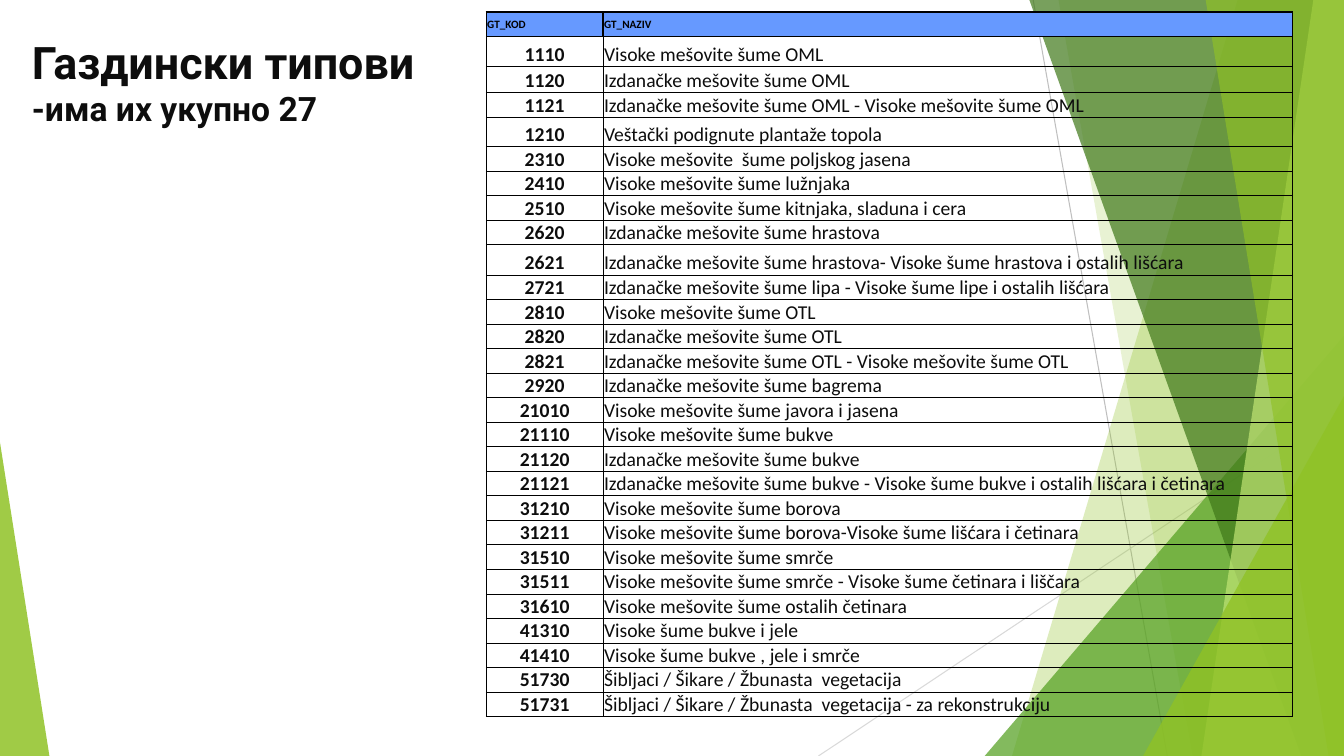
from dataclasses import dataclass
from typing import Any

from lxml import etree
from pptx import Presentation
from pptx import util as u
from pptx.dml.color import RGBColor
from pptx.enum import shapes, text
from pptx.oxml import ns

BLACK = RGBColor(0x00, 0x00, 0x00)
INK = RGBColor(0x0D, 0x0D, 0x0D)
HEADER_BLUE = RGBColor(0x66, 0x99, 0xFF)
LIME = RGBColor(0x90, 0xC2, 0x26)
PALE_LIME = RGBColor(0xC0, 0xE4, 0x74)
GREEN = RGBColor(0x54, 0xA0, 0x21)
DARK_GREEN = RGBColor(0x3F, 0x78, 0x19)
GREY = RGBColor(0xBF, 0xBF, 0xBF)
LIGHT_GREY = RGBColor(0xD9, 0xD9, 0xD9)

WIDTH, HEIGHT = 960, 540
FACET_TOP = -0.6


@dataclass(frozen=True)
class Ray:
    start: tuple[float, float]
    end: tuple[float, float]
    color: RGBColor


@dataclass(frozen=True)
class Facet:
    top_left: float
    bottom_left: float
    color: RGBColor
    opacity: int


@dataclass(frozen=True)
class Wedge:
    left: float
    top: float
    width: float
    apex: float
    color: RGBColor
    opacity: int


RAYS = [
    Ray((738, 0), (833.8, HEIGHT), GREY),
    Ray((WIDTH, 290.2), (584.6, HEIGHT), LIGHT_GREY),
]
PANES = [
    Facet(884.2, 722.9, LIME, 30),
    Facet(756, 851.8, LIME, 20),
    Wedge(703.4, 239.8, 256.6, 1, GREEN, 72),
    Facet(735.1, 929.5, DARK_GREEN, 70),
    Facet(938.2, 858.2, PALE_LIME, 70),
    Facet(861.1, 949, LIME, 65),
    Wedge(816.5, 283, 143.5, 1, LIME, 80),
    Wedge(0, 316.1, 35.3, 0, LIME, 85),
]
TITLE_LINES = [("Газдински типови", 32), ("-има их укупно 27", 24)]
FOREST_TYPES = [
    ("GT_KOD", "GT_NAZIV"),
    ("1110", "Visoke mešovite šume OML"),
    ("1120", "Izdanačke mešovite šume OML"),
    ("1121", "Izdanačke mešovite šume OML - Visoke mešovite šume OML"),
    ("1210", "Veštački podignute plantaže topola"),
    ("2310", "Visoke mešovite  šume poljskog jasena"),
    ("2410", "Visoke mešovite šume lužnjaka"),
    ("2510", "Visoke mešovite šume kitnjaka, sladuna i cera"),
    ("2620", "Izdanačke mešovite šume hrastova"),
    ("2621", "Izdanačke mešovite šume hrastova- Visoke šume hrastova i ostalih lišćara"),
    ("2721", "Izdanačke mešovite šume lipa - Visoke šume lipe i ostalih lišćara"),
    ("2810", "Visoke mešovite šume OTL"),
    ("2820", "Izdanačke mešovite šume OTL"),
    ("2821", "Izdanačke mešovite šume OTL - Visoke mešovite šume OTL"),
    ("2920", "Izdanačke mešovite šume bagrema"),
    ("21010", "Visoke mešovite šume javora i jasena"),
    ("21110", "Visoke mešovite šume bukve"),
    ("21120", "Izdanačke mešovite šume bukve"),
    ("21121", "Izdanačke mešovite šume bukve - Visoke šume bukve i ostalih lišćara i četinara"),
    ("31210", "Visoke mešovite šume borova"),
    ("31211", "Visoke mešovite šume borova-Visoke šume lišćara i četinara"),
    ("31510", "Visoke mešovite šume smrče"),
    ("31511", "Visoke mešovite šume smrče - Visoke šume četinara i liščara"),
    ("31610", "Visoke mešovite šume ostalih četinara"),
    ("41310", "Visoke šume bukve i jele"),
    ("41410", "Visoke šume bukve , jele i smrče"),
    ("51730", "Šibljaci / Šikare / Žbunasta  vegetacija"),
    ("51731", "Šibljaci / Šikare / Žbunasta  vegetacija - za rekonstrukciju"),
]
COLUMN_WIDTHS = [83.5, 492.5]
ROW_HEIGHT = 16.7
TALL_ROWS = {0: 17.3, 1: 21.6, 2: 18.4, 3: 18, 4: 20.9, 6: 17.3, 8: 17.3, 9: 21.6}
CELL_MARGINS = {
    "margin_left": u.Pt(0.7),
    "margin_right": u.Pt(0.7),
    "margin_top": u.Pt(0.7),
    "margin_bottom": u.Pt(0),
}


def apply(target: Any, values: dict[str, Any]) -> None:
    for name, value in values.items():
        setattr(target, name, value)


def style_font(font: Any, size: float, name: str, color: RGBColor, bold: bool) -> None:
    apply(font, {"size": u.Pt(size), "name": name, "bold": bold})
    font.color.rgb = color


def draw_ray(page: Any, ray: Ray) -> None:
    points = [u.Pt(value) for value in (*ray.start, *ray.end)]
    line = page.shapes.add_connector(shapes.MSO_CONNECTOR.STRAIGHT, *points)
    line.line.width = u.Pt(0.75)
    line.line.color.rgb = ray.color
    etree.SubElement(line._element.spPr, ns.qn("a:effectLst"))


def draw_pane(page: Any, pane: Facet | Wedge) -> None:
    if isinstance(pane, Facet):
        builder = page.shapes.build_freeform(u.Pt(pane.top_left), u.Pt(FACET_TOP))
        corners = [(WIDTH, FACET_TOP), (WIDTH, HEIGHT), (pane.bottom_left, HEIGHT)]
        builder.add_line_segments([(u.Pt(x), u.Pt(y)) for x, y in corners])
        shape = builder.convert_to_shape()
    else:
        frame = (pane.left, pane.top, pane.width, HEIGHT - pane.top)
        shape = page.shapes.add_shape(
            shapes.MSO_SHAPE.ISOSCELES_TRIANGLE, *map(u.Pt, frame)
        )
        shape.adjustments[0] = pane.apex
    shape.shadow.inherit = False
    shape.line.fill.background()
    shape.fill.solid()
    shape.fill.fore_color.rgb = pane.color
    color = shape._element.spPr.find(f".//{ns.qn('a:srgbClr')}")
    etree.SubElement(color, ns.qn("a:alpha"), val=str(pane.opacity * 1000))


def draw_title(page: Any) -> None:
    box = page.shapes.add_textbox(u.Pt(15.8), u.Pt(20.9), u.Pt(295.2), u.Pt(368.6))
    box.text_frame.word_wrap = True
    para = box.text_frame.paragraphs[0]
    for number, (words, size) in enumerate(TITLE_LINES):
        if number:
            para.add_line_break()
        span = para.add_run()
        span.text = words
        style_font(span.font, size, "Roboto", INK, True)


def draw_borders(cell: Any, widths: dict[str, float]) -> None:
    properties = cell._tc.get_or_add_tcPr()
    for side, width in widths.items():
        line = etree.SubElement(properties, ns.qn(f"a:ln{side}"), w=str(u.Pt(width)))
        fill = etree.SubElement(line, ns.qn("a:solidFill"))
        etree.SubElement(fill, ns.qn("a:srgbClr"), val=str(BLACK))


def fill_cell(cell: Any, words: str, is_header: bool, is_code: bool) -> None:
    outer = 1 if is_header else 0.5
    draw_borders(cell, {"L": outer, "R": outer, "T": outer, "B": 0.5})
    apply(cell, CELL_MARGINS)
    para = cell.text_frame.paragraphs[0]
    span = para.add_run()
    span.text = words
    if is_header:
        cell.fill.solid()
        cell.fill.fore_color.rgb = HEADER_BLUE
        cell.vertical_anchor = text.MSO_ANCHOR.MIDDLE
        para.alignment = text.PP_ALIGN.JUSTIFY
        style_font(span.font, 8, "Calibri", BLACK, True)
    else:
        cell.fill.background()
        cell.vertical_anchor = text.MSO_ANCHOR.BOTTOM
        para.alignment = text.PP_ALIGN.CENTER if is_code else text.PP_ALIGN.LEFT
        style_font(span.font, 14, "Calibri", INK, is_code)


def draw_forest_table(page: Any) -> None:
    heights = [TALL_ROWS.get(row, ROW_HEIGHT) for row in range(len(FOREST_TYPES))]
    frame = (347.3, 8.6, sum(COLUMN_WIDTHS), sum(heights))
    table = page.shapes.add_table(
        len(heights), len(COLUMN_WIDTHS), *map(u.Pt, frame)
    ).table
    apply(table, {"first_row": False, "horz_banding": False})
    for column, width in zip(table.columns, COLUMN_WIDTHS):
        column.width = u.Pt(width)
    for row, (height, entry) in enumerate(zip(heights, FOREST_TYPES)):
        table.rows[row].height = u.Pt(height)
        for column, words in enumerate(entry):
            fill_cell(table.cell(row, column), words, row == 0, column == 0)


def main() -> None:
    deck = Presentation()
    apply(deck, {"slide_width": u.Pt(WIDTH), "slide_height": u.Pt(HEIGHT)})
    page = deck.slides.add_slide(deck.slide_layouts[6])
    for ray in RAYS:
        draw_ray(page, ray)
    for pane in PANES:
        draw_pane(page, pane)
    draw_title(page)
    draw_forest_table(page)
    deck.save("out.pptx")


if __name__ == "__main__":
    main()
